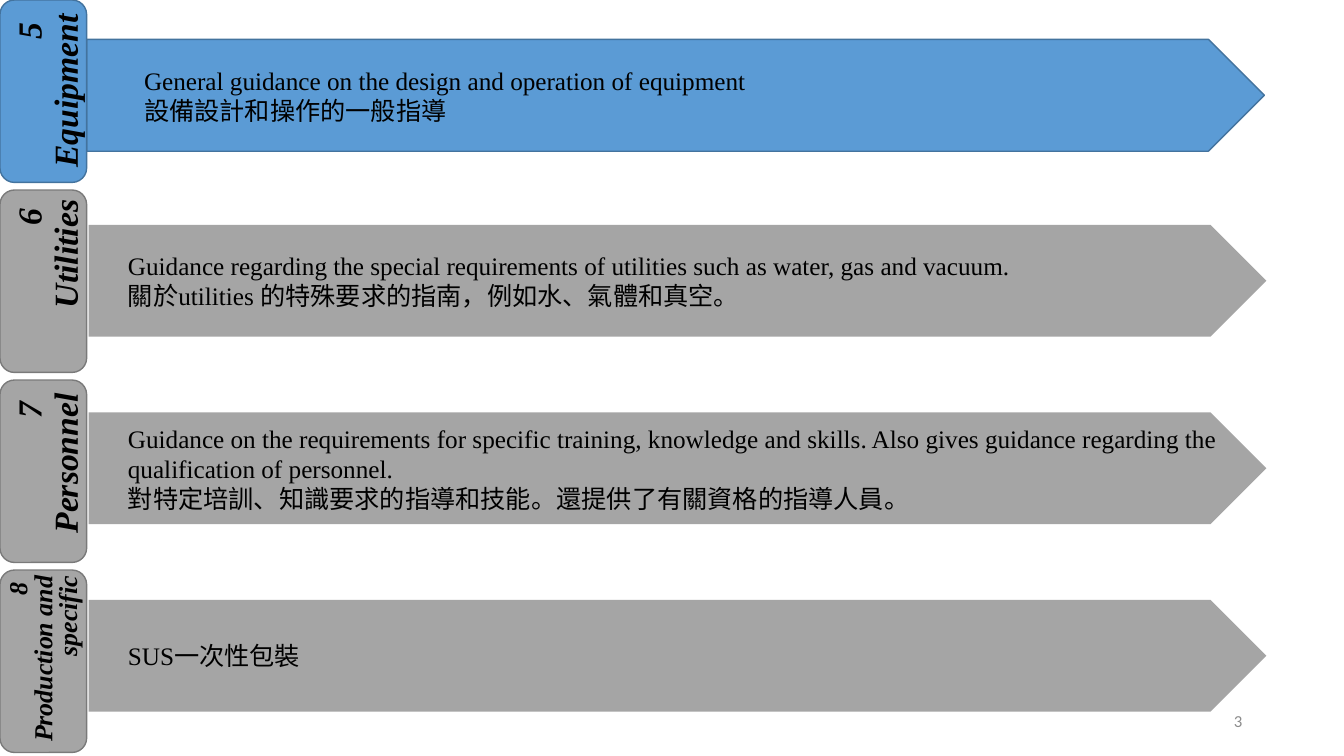
"""Build the slide of guidance sections 5 to 8, each a tab with an arrow."""
from pptx import Presentation
from pptx.dml.color import RGBColor
from pptx.enum import shapes, text
from pptx.util import Inches, Pt

COLORS = {"blue": "5B9BD5", "blue_edge": "43739E", "gray": "A5A5A5",
          "gray_edge": "7A7A7A", "ink": "000000", "number": "8C8C8C"}
ARROW_HEIGHT = 1.11
TAB_WIDTH, TAB_HEIGHT, TAB_PITCH = 0.86, 1.81, 1.885

prs = Presentation()
prs.slide_width, prs.slide_height = Inches(13.33), Inches(7.5)
slide = prs.slides.add_slide(prs.slide_layouts[6])


def add_block(preset, box, fill, edge=None):
    block = slide.shapes.add_shape(preset, *map(Inches, box))
    block.shadow.inherit = False
    block.fill.solid()
    block.fill.fore_color.rgb = RGBColor.from_string(COLORS[fill])
    if edge:
        block.line.color.rgb = RGBColor.from_string(COLORS[edge])
        block.line.width = Pt(1)
    else:
        block.line.fill.background()


def add_label(words, box, size, color="ink", font="Times New Roman",
              align=text.PP_ALIGN.LEFT, strong=None, spacing=None):
    label = slide.shapes.add_textbox(*map(Inches, box))
    frame = label.text_frame
    frame.word_wrap = True
    frame.vertical_anchor = text.MSO_ANCHOR.MIDDLE
    frame.text = words
    for paragraph in frame.paragraphs:
        paragraph.alignment = align
        paragraph.line_spacing = spacing
        for run in paragraph.runs:
            run.font.name = font
            run.font.size = Pt(size)
            run.font.bold = run.font.italic = strong
            run.font.color.rgb = RGBColor.from_string(COLORS[color])
    return label


add_label("3", (9.42, 6.95, 3, 0.4), 12, "number", "Calibri", text.PP_ALIGN.RIGHT)

sections = [
    {"tab": "5 \vEquipment", "tab_center": (0.485, 0.95), "tab_length": 1.81,
     "arrow": (0.86, 0.39), "left": 1.33, "height": 0.71,
     "guidance": "General guidance on the design and operation of equipment\n"
                 "設備設計和操作的一般指導"},
    {"tab": "6 \nUtilities", "tab_center": (0.485, 3.03), "tab_length": 2.29,
     "arrow": (0.88, 2.23), "left": 1.17, "height": 0.71,
     "guidance": "Guidance regarding the special requirements of utilities "
                 "such as water, gas and vacuum.\n"
                 "關於utilities 的特殊要求的指南，例如水、氣體和真空。"},
    {"tab": "7 \nPersonnel", "tab_center": (0.485, 4.95), "tab_length": 2.29,
     "arrow": (0.88, 4.09), "left": 1.17, "height": 1.01,
     "guidance": "Guidance on the requirements for specific training, knowledge and "
                 "skills. Also gives guidance regarding the qualification of personnel.\n"
                 "對特定培訓、知識要求的指導和技能。還提供了有關資格的指導人員。"},
    {"tab": "8 \nProduction and specific", "tab_center": (0.445, 6.76), "tab_length": 2.29,
     "arrow": (0.88, 5.95), "left": 1.17, "height": 0.4,
     "guidance": "SUS一次性包裝", "tab_size": 18.5, "tab_spacing": 0.8},
]

for index, section in enumerate(sections):
    current = index == 0
    fill = "blue" if current else "gray"
    arrow_left, arrow_top = section["arrow"]
    add_block(shapes.MSO_SHAPE.PENTAGON, (arrow_left, arrow_top, 11.68, ARROW_HEIGHT),
              fill, "blue_edge" if current else None)
    guidance_top = arrow_top + (ARROW_HEIGHT - section["height"]) / 2
    add_label(section["guidance"],
              (section["left"], guidance_top, 11.09, section["height"]), 18)

    add_block(shapes.MSO_SHAPE.ROUNDED_RECTANGLE,
              (0, index * TAB_PITCH, TAB_WIDTH, TAB_HEIGHT), fill, fill + "_edge")
    center_x, center_y = section["tab_center"]
    length = section["tab_length"]
    tab_label = add_label(
        section["tab"],
        (center_x - length / 2, center_y - TAB_WIDTH / 2, length, TAB_WIDTH),
        section.get("tab_size", 24), align=text.PP_ALIGN.RIGHT, strong=True,
        spacing=section.get("tab_spacing", 0.9))
    tab_label.rotation = 270

prs.save("out.pptx")
